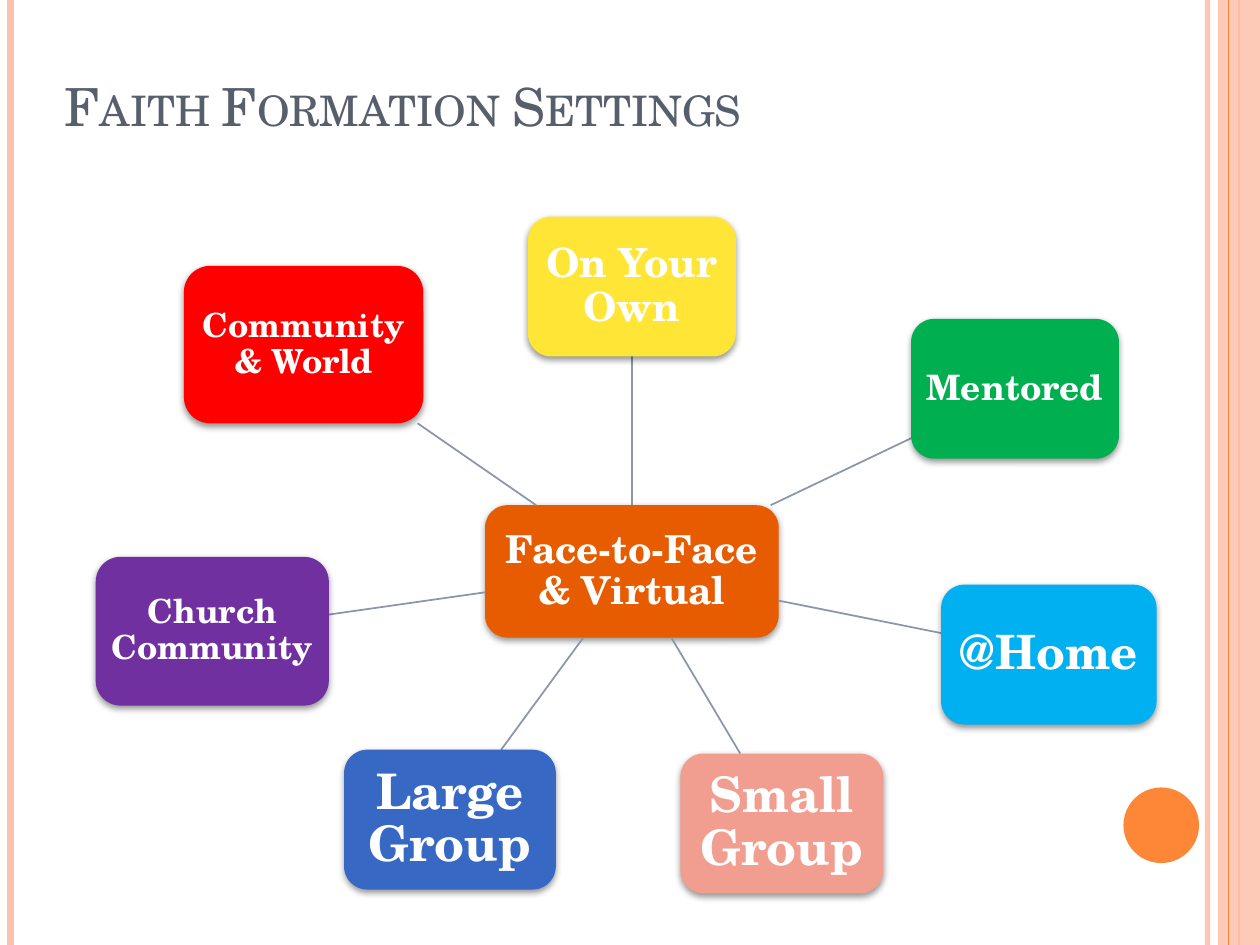
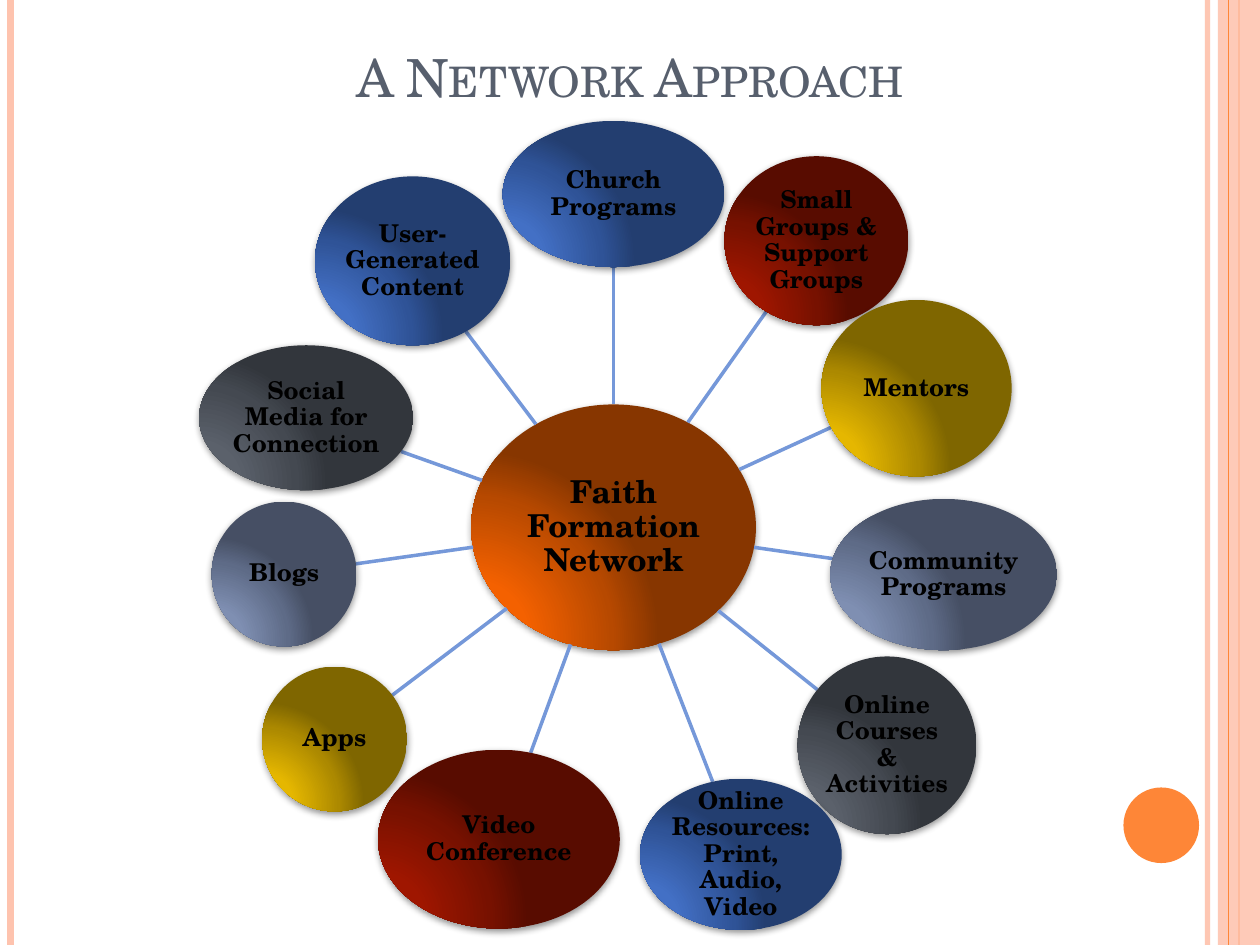
from math import hypot

from lxml import etree
from pptx import Presentation
from pptx.dml.color import RGBColor
from pptx.enum.shapes import MSO_CONNECTOR, MSO_SHAPE
from pptx.enum.text import MSO_ANCHOR, PP_ALIGN
from pptx.oxml.ns import qn
from pptx.util import Pt

STRAIGHT = MSO_CONNECTOR.STRAIGHT
RECTANGLE, ROUNDED, ELLIPSE = MSO_SHAPE.RECTANGLE, MSO_SHAPE.ROUNDED_RECTANGLE, MSO_SHAPE.OVAL
LEFT, CENTER = PP_ALIGN.LEFT, PP_ALIGN.CENTER
BOTTOM, MIDDLE = MSO_ANCHOR.BOTTOM, MSO_ANCHOR.MIDDLE

FONT = "TeX Gyre Schola"
WIDTH, HEIGHT = 720, 540

# Theme colours
PEACH = RGBColor(0xFE, 0xC3, 0xAE)
ORANGE = RGBColor(0xFE, 0x86, 0x37)
SLATE = RGBColor(0x57, 0x5F, 0x6D)
WHITE = RGBColor(0xFF, 0xFF, 0xFF)
BLACK = RGBColor(0x00, 0x00, 0x00)
GREY_SPOKE = RGBColor(0x8B, 0x95, 0xAB)
BLUE_SPOKE = RGBColor(0x75, 0x98, 0xD9)

# Setting colours
RUST = RGBColor(0xE7, 0x5C, 0x01)
YELLOW = RGBColor(0xFF, 0xE6, 0x36)
GREEN = RGBColor(0x00, 0xB0, 0x50)
SKY = RGBColor(0x00, 0xB0, 0xF0)
PINK = RGBColor(0xF1, 0x9E, 0x91)
BLUE = RGBColor(0x36, 0x68, 0xC4)
PURPLE = RGBColor(0x70, 0x30, 0xA0)
RED = RGBColor(0xFF, 0x00, 0x00)

# Radial gradients, from the lit lower left corner outwards
STOPS = (0, 30, 75, 100)


def gradient(*codes):
    return [RGBColor.from_string(code) for code in codes]


ORANGE_GLOW = gradient("FD6400", "F46100", "B74900", "873600")
BLUE_GLOW = gradient("4574CC", "4370C5", "2F5397", "233E70")
RED_GLOW = gradient("A41700", "9F1600", "771100", "580C00")
GOLD_GLOW = gradient("EDBE00", "E5B700", "AC8900", "7F6600")
LILAC_GLOW = gradient("8494B9", "7F8FB2", "5E6B87", "464F64")
GREY_GLOW = gradient("5E656F", "5B616B", "444951", "32363C")

# Nodes: text, (left, top, width, height), text size, fill
SETTINGS_HUB = ("Face-to-Face\v& Virtual", (277.2, 288.7, 167.8, 75.6), 22, RUST)
SETTINGS = [
    ("On Your Own", (301.7, 123.8, 118.8, 79.9), 23, YELLOW),
    ("Mentored", (520.6, 182.2, 118.8, 79.9), 20, GREEN),
    ("@Home", (537.8, 334.1, 123.1, 79.9), 27, SKY),
    ("Small Group", (388.8, 430.6, 115.9, 79.9), 28, PINK),
    ("Large Group", (196.6, 428.4, 121, 79.9), 28, BLUE),
    ("Church Community", (54.7, 318.2, 133.2, 85), 19, PURPLE),
    ("Community & World", (105.1, 151.9, 136.8, 90), 19, RED),
]
NETWORK_HUB = ("Faith Formation Network", (269.3, 231.1, 162.7, 140.4), 18, ORANGE_GLOW)
NETWORK = [
    ("Church Programs", (287.3, 69.1, 126.7, 83.5), 14, BLUE_GLOW),
    ("Small Groups & Support Groups", (414, 89.3, 105.1, 96.5), 14, RED_GLOW),
    ("Mentors", (469.4, 171.4, 108.7, 100.8), 14, GOLD_GLOW),
    ("Community Programs", (474.5, 285.1, 129.6, 86.4), 14, LILAC_GLOW),
    ("Online Courses & Activities", (455.8, 375.1, 102.2, 101.5), 14, GREY_GLOW),
    ("Online Resources: Print, Audio, Video", (365.8, 445, 115.2, 86.4), 14, BLUE_GLOW),
    ("Video Conference", (216, 428.4, 138.2, 102.2), 14, RED_GLOW),
    ("Apps", (149.8, 380.9, 82.8, 82.8), 14, GOLD_GLOW),
    ("Blogs", (121, 286.6, 82.8, 82.8), 14, LILAC_GLOW),
    ("Social Media for Connection", (113.8, 197.3, 122.4, 82.8), 14, GREY_GLOW),
    ("User-Generated Content", (180, 100.8, 111.6, 96.5), 14, BLUE_GLOW),
]


# Drawing helpers
def add_element(parent, tag, **attributes):
    element = etree.SubElement(parent, qn(tag))
    for name, value in attributes.items():
        element.set(name, str(value))
    return element


def set_opacity(item, percent):
    for colour in item._element.spPr.iter(qn("a:srgbClr")):
        add_element(colour, "a:alpha", val=percent * 1000)


def add_line(page, start, end, colour, weight):
    line = page.shapes.add_connector(STRAIGHT, *map(Pt, start + end))
    line.line.color.rgb = colour
    line.line.width = Pt(weight)
    add_element(line._element.spPr, "a:effectLst")
    return line


def fill_gradient(shape, colours):
    shape.fill.background()
    properties = shape._element.spPr
    fill = etree.Element(qn("a:gradFill"), rotWithShape="1")
    stops = add_element(fill, "a:gsLst")
    for position, colour in zip(STOPS, colours):
        stop = add_element(stops, "a:gs", pos=position * 1000)
        add_element(stop, "a:srgbClr", val=colour)
    circle = add_element(fill, "a:path", path="circle")
    add_element(circle, "a:fillToRect", l=5000, t=100000, r=120000, b=10000)
    properties.replace(properties.find(qn("a:noFill")), fill)


def add_shape(page, kind, bounds, fill):
    shape = page.shapes.add_shape(kind, *map(Pt, bounds))
    if isinstance(fill, list):
        fill_gradient(shape, fill)
    else:
        shape.fill.solid()
        shape.fill.fore_color.rgb = fill
    shape.line.fill.background()
    shape.shadow.inherit = False
    return shape


def add_shadow(shape):
    effects = shape._element.spPr.find(qn("a:effectLst"))
    shadow = add_element(effects, "a:outerShdw", blurRad=Pt(4), dist=Pt(1.6),
                         dir=90 * 60000, rotWithShape=0)
    colour = add_element(shadow, "a:srgbClr", val=BLACK)
    add_element(colour, "a:alpha", val=42000)


def write(box, text, size, colour, align, anchor, bold=False):
    frame = box.text_frame
    frame.word_wrap = True
    frame.vertical_anchor = anchor
    frame.text = text
    para = frame.paragraphs[0]
    para.alignment = align
    for span in para.runs:
        span.font.name = FONT
        span.font.size = Pt(size)
        span.font.bold = bold
        span.font.color.rgb = colour
    return para


# Shared page parts
def add_frame(page):
    def rule(x, colour, weight):
        return add_line(page, (x, 0), (x, HEIGHT), colour, weight)

    set_opacity(rule(690, PEACH, 3), 93)
    rule(6, PEACH, 4.5)
    rule(708, ORANGE, 1.5)
    band = add_shape(page, RECTANGLE, (696, 0, 24, HEIGHT), PEACH)
    set_opacity(band, 87)
    rule(702, ORANGE, 0.75)
    add_shape(page, ELLIPSE, (642, 450, 43.2, 43.2), ORANGE)


def add_title(page, text, bounds, align):
    box = page.shapes.add_textbox(*map(Pt, bounds))
    para = write(box, text, 30, SLATE, align, BOTTOM)
    for span in para.runs:
        span.font._element.set("cap", "small")


# Hub and spokes
def center(bounds):
    left, top, width, height = bounds
    return left + width / 2, top + height / 2


def edge_point(kind, bounds, target):
    """Point where the line from the centre to the target leaves the outline."""
    x, y = center(bounds)
    dx, dy = target[0] - x, target[1] - y
    across, down = abs(dx) / (bounds[2] / 2), abs(dy) / (bounds[3] / 2)
    reach = hypot(across, down) if kind == ELLIPSE else max(across, down)
    return x + dx / reach, y + dy / reach


def add_node(page, kind, node, colour, inset_for):
    text, bounds, size, fill = node
    shape = add_shape(page, kind, bounds, fill)
    add_shadow(shape)
    frame = shape.text_frame
    inset = Pt(inset_for(size))
    frame.margin_left = frame.margin_right = inset
    frame.margin_top = frame.margin_bottom = inset
    para = write(shape, text, size, colour, CENTER, MIDDLE, bold=True)
    para.line_spacing = 0.9


def add_network(page, kind, hub, nodes, text_colour, spoke, inset_for):
    add_node(page, kind, hub, text_colour, inset_for)
    for node in nodes:
        start = edge_point(kind, hub[1], center(node[1]))
        end = edge_point(kind, node[1], center(hub[1]))
        add_line(page, start, end, *spoke)
        add_node(page, kind, node, text_colour, inset_for)


def add_page(deck, title, bounds, align):
    page = deck.slides.add_slide(deck.slide_layouts[6])
    add_frame(page)
    add_title(page, title, bounds, align)
    return page


def main():
    deck = Presentation()
    deck.slide_width, deck.slide_height = Pt(WIDTH), Pt(HEIGHT)

    page = add_page(deck, "Faith Formation Settings", (30, 24, 588, 57.6), LEFT)
    add_network(page, ROUNDED, SETTINGS_HUB, SETTINGS, WHITE, (GREY_SPOKE, 1),
                lambda size: size * 0.2)

    page = add_page(deck, "A Network Approach", (36, 0, 648, 65.5), CENTER)
    add_network(page, ELLIPSE, NETWORK_HUB, NETWORK, BLACK, (BLUE_SPOKE, 2),
                lambda size: size * 0.05)

    deck.save("out.pptx")


if __name__ == "__main__":
    main()
